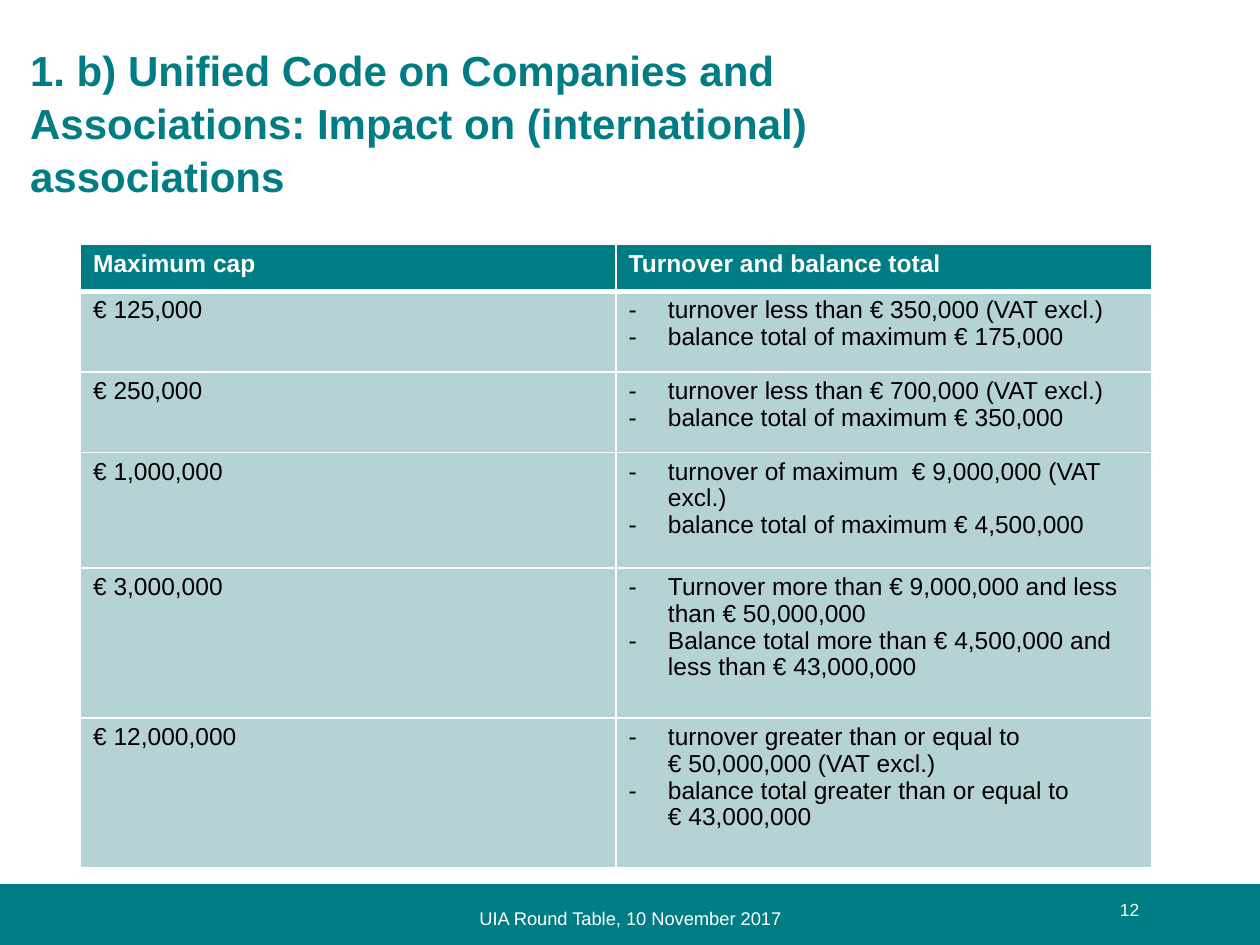
"""Build the slide on liability caps for associations."""
from dataclasses import dataclass

from lxml.etree import SubElement as Sub
from pptx import Presentation as Deck
from pptx.dml.color import RGBColor as RGB
from pptx.enum.shapes import MSO_SHAPE as Kind
from pptx.enum.text import MSO_ANCHOR as Anchor, PP_ALIGN as Align
from pptx.oxml.ns import qn
from pptx.util import Pt


@dataclass(frozen=True)
class Theme:
    face: str = "Arial"
    teal: str = "007C85"
    pale: str = "B5D2D5"
    white: str = "FFFFFF"
    black: str = "000000"
    title: float = 24
    cell: float = 14
    foot: float = 10.5
    page: float = 10


HEADS = ("Maximum cap", "Turnover and balance total")
CAPS = [
    (46.1, "€ 125,000", ["turnover less than € 350,000 (VAT excl.)",
                         "balance total of maximum € 175,000"]),
    (46.1, "€ 250,000", ["turnover less than € 700,000 (VAT excl.)",
                         "balance total of maximum € 350,000"]),
    (66.1, "€ 1,000,000", ["turnover of maximum  € 9,000,000 (VAT excl.)",
                           "balance total of maximum € 4,500,000"]),
    (85.7, "€ 3,000,000", ["Turnover more than € 9,000,000 and less than € 50,000,000",
                           "Balance total more than € 4,500,000 and less than € 43,000,000"]),
    (85.7, "€ 12,000,000", ["turnover greater than or equal to\v€ 50,000,000 (VAT excl.)",
                            "balance total greater than or equal to\v€ 43,000,000"]),
]


def apply(obj, **vals):
    for name, val in vals.items():
        setattr(obj, name, val)


class Maker:
    def __init__(self, slide, theme):
        self.slide, self.theme = slide, theme

    def text(self, par, words, size, color, bold=False, **form):
        par.text = words
        apply(par, **form)
        apply(par.font, name=self.theme.face, size=Pt(size), bold=bold)
        par.font.color.rgb = RGB.from_string(color)

    def title(self, words, *box):
        shape = self.slide.shapes.title
        apply(shape, **dict(zip(("left", "top", "width", "height"), map(Pt, box))))
        apply(shape.text_frame, word_wrap=True, vertical_anchor=Anchor.MIDDLE)
        self.text(shape.text_frame.paragraphs[0], words, self.theme.title,
                  self.theme.teal, True, alignment=Align.LEFT, line_spacing=1.05)

    def band(self, *box):
        shape = self.slide.shapes.add_shape(Kind.RECTANGLE, *map(Pt, box))
        shape.shadow.inherit = False
        shape.line.width = Pt(0.75)
        for fill in (shape.fill, shape.line.fill):
            fill.solid()
            fill.fore_color.rgb = RGB.from_string(self.theme.teal)

    def label(self, words, size, align, *box):
        frame = self.slide.shapes.add_textbox(*map(Pt, box)).text_frame
        apply(frame, word_wrap=True, vertical_anchor=Anchor.MIDDLE)
        self.text(frame.paragraphs[0], words, size, self.theme.white, alignment=align)

    def edge(self, cell, **wide):
        props = cell._tc.get_or_add_tcPr()
        for side in "LRTB":
            line = Sub(props, qn(f"a:ln{side}"), w=str(Pt(wide.get(side, 1))))
            Sub(Sub(line, qn("a:solidFill")), qn("a:srgbClr"), val=self.theme.white)

    def dash(self, par):
        props = par._p.get_or_add_pPr()
        for name, val in {"marL": Pt(22.5), "indent": -Pt(22.5)}.items():
            props.set(name, str(val))
        Sub(props, qn("a:buFont"), typeface=self.theme.face)
        Sub(props, qn("a:buChar"), char="-")

    def cell(self, cell, lines, fill, color, bold=False, dash=False, **wide):
        self.edge(cell, **wide)
        cell.fill.solid()
        cell.fill.fore_color.rgb = RGB.from_string(fill)
        frame = cell.text_frame
        for num, words in enumerate(lines):
            par = frame.add_paragraph() if num else frame.paragraphs[0]
            if dash:
                self.dash(par)
            self.text(par, words, self.theme.cell, color, bold, line_spacing=0.97)

    def table(self, heads, rows, head, *box):
        look = self.theme
        table = self.slide.shapes.add_table(len(rows) + 1, len(heads), *map(Pt, box)).table
        table.rows[0].height = Pt(head)
        for col, words in enumerate(heads):
            self.cell(table.cell(0, col), [words], look.teal, look.white, True, B=3)
        for num, (tall, cap, terms) in enumerate(rows, 1):
            table.rows[num].height = Pt(tall)
            top = 3 if num == 1 else 1
            for col, lines in enumerate(([cap], terms)):
                self.cell(table.cell(num, col), lines, look.pale, look.black,
                          dash=col == 1, T=top)


def main():
    deck = Deck()
    apply(deck, slide_width=Pt(720), slide_height=Pt(540))
    look = Theme()
    make = Maker(deck.slides.add_slide(deck.slide_layouts[5]), look)
    make.band(0, 505.4, 720, 34.6)
    make.label("UIA Round Table, 10 November 2017", look.foot, Align.CENTER,
               223.2, 514, 274.3, 21)
    make.table(HEADS, CAPS, 26.6, 46, 139.8, 612, 356.3)
    make.label("12", look.page, Align.RIGHT, 575.3, 505.4, 82.8, 28.8)
    make.title("1. b) Unified Code on Companies and Associations: "
               "Impact on (international) associations", 10, 22.3, 580.3, 94.3)
    deck.save("out.pptx")


if __name__ == "__main__":
    main()
